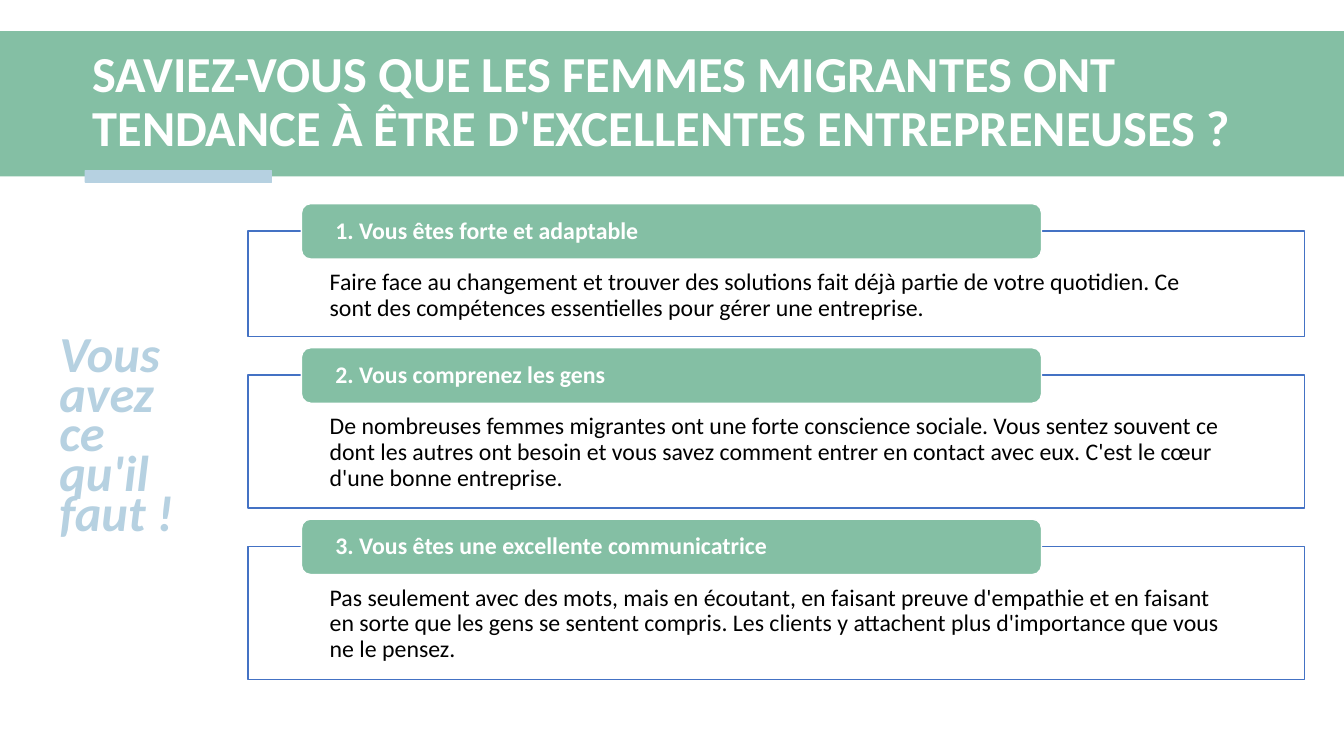
from dataclasses import dataclass

import pptx
import pptx.dml.color
import pptx.enum.shapes
import pptx.enum.text
import pptx.util

Inches = pptx.util.Inches
Pt = pptx.util.Pt
KIND = pptx.enum.shapes.MSO_SHAPE
ANCHOR = pptx.enum.text.MSO_ANCHOR
ALIGN = pptx.enum.text.PP_ALIGN

COLORS = {"green": "84BFA4", "pale": "B6D1E1", "blue": "4472C4",
          "white": "FFFFFF", "black": "000000"}


@dataclass
class Box:
    left: float
    top: float
    width: float
    height: float


@dataclass
class Card:
    head: str
    body: str
    height: float


CARDS = [
    Card("1. Vous êtes forte et adaptable",
         "Faire face au changement et trouver des solutions fait déjà partie de votre "
         "quotidien. Ce sont des compétences essentielles pour gérer une entreprise.", 1.05),
    Card("2. Vous comprenez les gens",
         "De nombreuses femmes migrantes ont une forte conscience sociale. Vous sentez "
         "souvent ce dont les autres ont besoin et vous savez comment entrer en contact "
         "avec eux. C'est le cœur d'une bonne entreprise.", 1.32),
    Card("3. Vous êtes une excellente communicatrice",
         "Pas seulement avec des mots, mais en écoutant, en faisant preuve d'empathie et "
         "en faisant en sorte que les gens se sentent compris. Les clients y attachent "
         "plus d'importance que vous ne le pensez.", 1.32),
]
FIRST, GAP, RISE = 2.29, 0.38, 0.27


def color(name: str) -> pptx.dml.color.RGBColor:
    return pptx.dml.color.RGBColor.from_string(COLORS[name])


def place(box: Box) -> list:
    return [Inches(n) for n in (box.left, box.top, box.width, box.height)]


def draw(slide, kind, box: Box, fill: str, line: str, width: float = 1):
    shape = slide.shapes.add_shape(kind, *place(box))
    shape.shadow.inherit = False
    shape.fill.solid()
    shape.fill.fore_color.rgb = color(fill)
    shape.line.color.rgb = color(line)
    shape.line.width = Pt(width)
    return shape


def write(shape, text: str, size: float, ink: str, insets: tuple, anchor,
          space=0.9, bold: bool = False, slant: bool = False) -> None:
    frame = shape.text_frame
    frame.word_wrap = True
    frame.vertical_anchor = anchor
    (frame.margin_left, frame.margin_top,
     frame.margin_right, frame.margin_bottom) = [Inches(n) for n in insets]
    frame.text = text
    para = frame.paragraphs[0]
    para.alignment = ALIGN.LEFT
    para.line_spacing = space
    font = para.runs[0].font
    font.name, font.size = "Calibri", Pt(size)
    font.bold, font.italic = bold, slant
    font.color.rgb = color(ink)


def add_card(slide, card: Card, top: float) -> None:
    panel = draw(slide, KIND.RECTANGLE, Box(2.46, top, 10.48, card.height), "white", "blue")
    write(panel, card.body, 17, "black", (0.81, 0.39, 0.81, 0.13), ANCHOR.TOP)
    tab = draw(slide, KIND.ROUNDED_RECTANGLE, Box(2.99, top - RISE, 7.34, 0.55),
               "green", "white")
    write(tab, card.head, 17, "white", (0.31, 0, 0.31, 0), ANCHOR.MIDDLE, bold=True)


def main() -> None:
    deck = pptx.Presentation()
    deck.slide_width, deck.slide_height = Inches(13.33), Inches(7.5)
    slide = deck.slides.add_slide(deck.slide_layouts[6])
    pad = (0.1, 0.05, 0.1, 0.05)

    # Title band with its accent bar
    band = draw(slide, KIND.RECTANGLE, Box(0, 0.31, 13.33, 1.44), "green", "green")
    band.line.fill.background()
    draw(slide, KIND.RECTANGLE, Box(0.84, 1.69, 1.85, 0.12), "pale", "pale", 0.19)
    title = slide.shapes.add_textbox(*place(Box(0.82, 0.41, 12.27, 1.23)))
    write(title, "SAVIEZ-VOUS QUE LES FEMMES MIGRANTES ONT TENDANCE À ÊTRE "
          "D'EXCELLENTES ENTREPRENEUSES ?", 36, "white", pad, ANCHOR.MIDDLE, bold=True)

    # Side message
    side = slide.shapes.add_textbox(*place(Box(0.49, 3.35, 1.62, 2.06)))
    write(side, "Vous avez ce qu'il faut !", 36, "pale", pad, ANCHOR.TOP,
          space=Pt(28.4), bold=True, slant=True)

    # Stacked cards
    top = FIRST
    for card in CARDS:
        add_card(slide, card, top)
        top += card.height + GAP

    deck.save("out.pptx")


if __name__ == "__main__":
    main()
